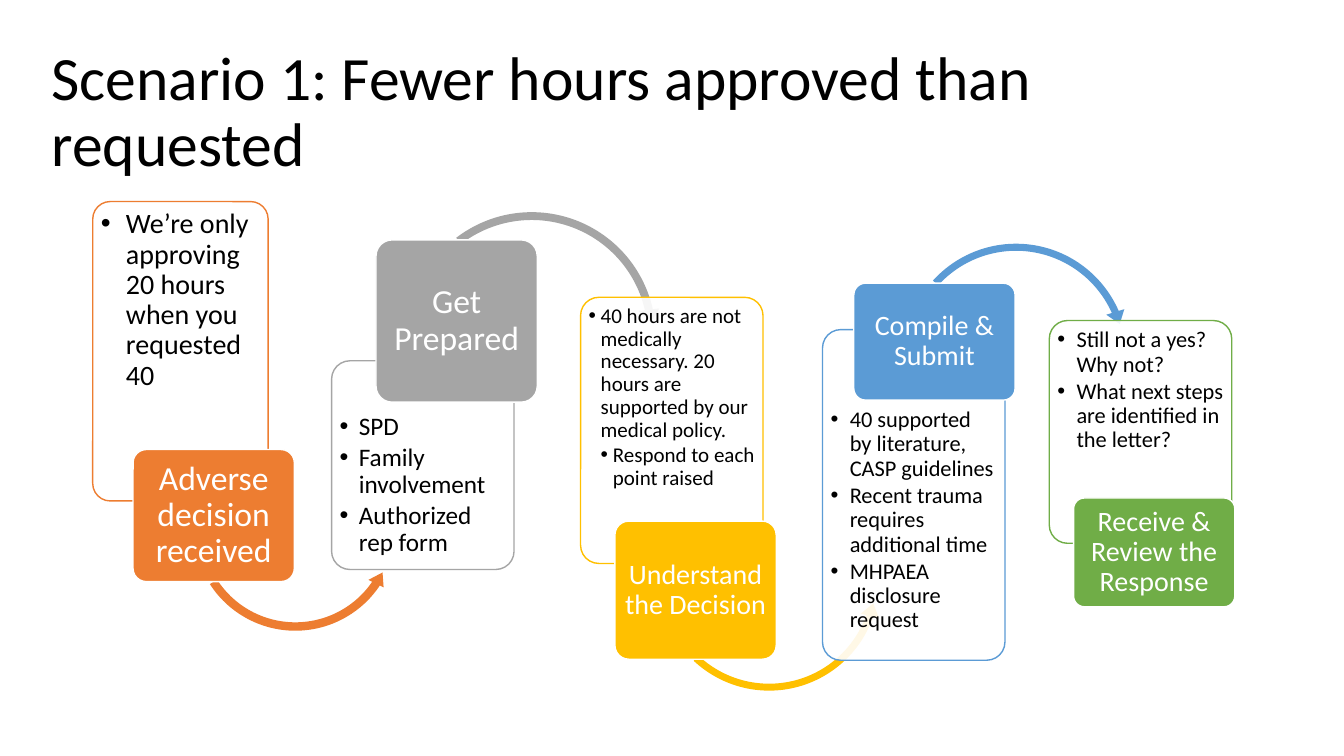
from dataclasses import dataclass
from typing import NamedTuple, Optional

from lxml import etree
from pptx import Presentation
from pptx import util as u
from pptx.dml.color import RGBColor
from pptx.enum import shapes, text
from pptx.oxml.ns import qn

FONT = "Calibri"
BLACK, WHITE = "000000", "FFFFFF"
COLUMNS, ROWS = 133.33, 75  # grid of the slide, one cell is 0.1 inch
SLIDE_WIDTH, SLIDE_HEIGHT = u.Inches(13.33), u.Inches(7.5)
CARD_MARGIN, LABEL_MARGIN = 0.5, 0.4
CARD_TEXT_SHARE = 11 / 14  # part of a card that its label leaves free


class Area(NamedTuple):
    column: float
    row: float
    width: float
    height: float

    def inset(self, margin: float) -> "Area":
        return Area(self.column + margin, self.row + margin,
                    self.width - 2 * margin, self.height - 2 * margin)

    def emu(self) -> tuple:
        across, down = SLIDE_WIDTH / COLUMNS, SLIDE_HEIGHT / ROWS
        return (round(self.column * across), round(self.row * down),
                round(self.width * across), round(self.height * down))


class Point(NamedTuple):
    words: str
    level: int = 1


@dataclass
class Arc:
    column: float
    row: float
    size: float
    bends: tuple


@dataclass
class Step:
    label: str
    color: str
    card: Area
    label_area: Area
    label_size: int
    points: list
    point_size: int
    hang: float
    label_on_top: bool = False
    arc: Optional[Arc] = None


STEPS = [
    Step("Adverse decision received", "ED7D31",
         Area(9.2, 20, 17.4, 29.7), Area(13.2, 44.6, 16, 13.1), 24,
         [Point("We’re only approving 20 hours when you requested 40")], 20, 0.25,
         arc=Arc(18.8, 42, 21, (0.04, 4.57, 20.42, 88.34, 0.04))),
    Step("Get Prepared", "A5A5A5",
         Area(32.9, 35.8, 18.1, 20.7), Area(37.3, 23.8, 16, 16.1), 24,
         [Point("SPD"), Point("Family involvement"), Point("Authorized rep form")],
         18, 0.19, label_on_top=True,
         arc=Arc(39.8, 20.4, 25.9, (0.03, 3.65, 208.35, 139.5, 0.04))),
    Step("Understand the Decision", "FFC000",
         Area(57.6, 29.5, 18.1, 26.4), Area(61, 51.7, 16, 13.7), 20,
         [Point("40 hours are not medically necessary. 20 hours are supported "
                "by our medical policy."),
          Point("Respond to each point raised", level=2)], 15, 0.12,
         arc=Arc(64.8, 46.1, 23, (0.03, 4.15, 11.58, 79.92, 0.04))),
    Step("Compile & Submit", "5B9BD5",
         Area(81.6, 32.7, 18.1, 32.8), Area(84.7, 28.1, 16, 11.6), 20,
         [Point("40 supported by literature, CASP guidelines"),
          Point("Recent trauma requires additional time"),
          Point("MHPAEA disclosure request")], 16, 0.19, label_on_top=True,
         arc=Arc(89.1, 23.6, 23.4, (0.03, 4.07, 201.71, 133.29, 0.04))),
    Step("Receive & Review the Response", "70AD47",
         Area(104.1, 31.8, 18.1, 22.1), Area(106.5, 49.4, 16, 10.8), 20,
         [Point("Still not a yes? Why not?"),
          Point("What next steps are identified in the letter?")], 16, 0.19),
]


def paint(color_format, color: str) -> None:
    color_format.rgb = RGBColor.from_string(color)


def add_form(slide, kind, area: Area, fill: str, line: Optional[str], bends: tuple):
    form = slide.shapes.add_shape(kind, *area.emu())
    form.shadow.inherit = False
    form.fill.solid()
    paint(form.fill.fore_color, fill)
    if line:
        paint(form.line.color, line)
        form.line.width = u.Pt(1)
    else:
        form.line.fill.background()
    for index, bend in enumerate(bends):
        form.adjustments[index] = bend
    return form


def style_paragraph(paragraph, size: int, color: str) -> None:
    paragraph.line_spacing = 0.9
    for run in paragraph.runs:
        run.font.name = FONT
        run.font.size = u.Pt(size)
        paint(run.font.color, color)


def add_frame(slide, area: Area, side_inset: float, anchor):
    frame = slide.shapes.add_textbox(*area.emu()).text_frame
    frame.word_wrap = True
    frame.vertical_anchor = anchor
    frame.margin_left = frame.margin_right = u.Inches(side_inset)
    frame.margin_top = frame.margin_bottom = u.Inches(0.03)
    return frame


def add_bullet(paragraph, level: int, hang: float) -> None:
    paragraph.level = level
    properties = paragraph._p.get_or_add_pPr()
    properties.set("marL", str(u.Inches(level * hang)))
    properties.set("indent", str(-u.Inches(hang)))
    etree.SubElement(properties, qn("a:buFont")).set("typeface", "Arial")
    etree.SubElement(properties, qn("a:buChar")).set("char", "•")


def add_card(slide, step: Step) -> None:
    card = add_form(slide, shapes.MSO_SHAPE.ROUNDED_RECTANGLE, step.card,
                    WHITE, step.color, (0.1,))
    # Slightly see-through fill
    white = card._element.spPr.find(qn("a:solidFill"))[0]
    etree.SubElement(white, qn("a:alpha")).set("val", "90000")

    # Points fill the part of the card away from the label
    inner = step.card.inset(CARD_MARGIN)
    height = step.card.height * CARD_TEXT_SHARE - 2 * CARD_MARGIN
    row = inner.row + inner.height - height if step.label_on_top else inner.row
    frame = add_frame(slide, inner._replace(row=row, height=height), 0.03,
                      text.MSO_ANCHOR.TOP)
    frame.text = "\n".join(point.words for point in step.points)
    for paragraph, point in zip(frame.paragraphs, step.points):
        style_paragraph(paragraph, step.point_size, BLACK)
        paragraph.space_after = u.Pt(round(step.point_size * 0.15, 1))
        add_bullet(paragraph, point.level, step.hang)


def add_arc(slide, step: Step) -> None:
    arc = step.arc
    kind = (shapes.MSO_SHAPE.CIRCULAR_ARROW if step.label_on_top
            else shapes.MSO_SHAPE.LEFT_CIRCULAR_ARROW)
    add_form(slide, kind, Area(arc.column, arc.row, arc.size, arc.size),
             step.color, None, arc.bends)


def add_label(slide, step: Step) -> None:
    add_form(slide, shapes.MSO_SHAPE.ROUNDED_RECTANGLE, step.label_area,
             step.color, WHITE, (0.1,))
    frame = add_frame(slide, step.label_area.inset(LABEL_MARGIN), 0.04,
                      text.MSO_ANCHOR.MIDDLE)
    frame.text = step.label
    heading = frame.paragraphs[0]
    heading.alignment = text.PP_ALIGN.CENTER
    style_paragraph(heading, step.label_size, WHITE)


def add_title(slide, words: str) -> None:
    title = slide.shapes.title
    title.left, title.top, title.width, title.height = Area(4.1, 4, 125, 14.5).emu()
    frame = title.text_frame
    frame.text = words
    frame.word_wrap = True
    frame.auto_size = text.MSO_AUTO_SIZE.NONE
    frame.vertical_anchor = text.MSO_ANCHOR.MIDDLE
    frame.paragraphs[0].alignment = text.PP_ALIGN.LEFT
    style_paragraph(frame.paragraphs[0], 44, BLACK)


def main() -> None:
    deck = Presentation()
    deck.slide_width, deck.slide_height = SLIDE_WIDTH, SLIDE_HEIGHT
    slide = deck.slides.add_slide(deck.slide_layouts.get_by_name("Title Only"))
    add_title(slide, "Scenario 1: Fewer hours approved than requested")
    for step in STEPS:
        add_card(slide, step)
        if step.arc:
            add_arc(slide, step)
        add_label(slide, step)
    deck.save("out.pptx")


if __name__ == "__main__":
    main()
